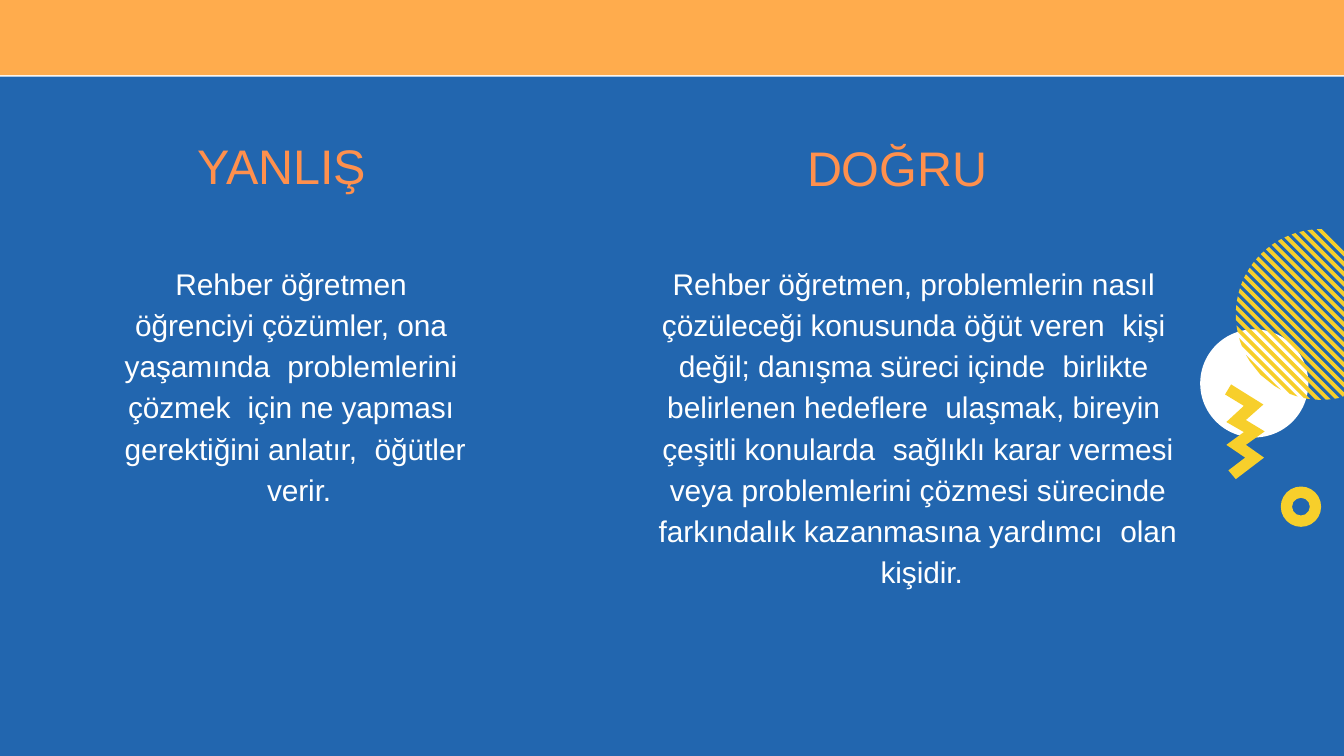
from math import sqrt

from lxml.etree import SubElement
from pptx import Presentation
from pptx.dml.color import RGBColor
from pptx.enum.shapes import MSO_SHAPE as Shape
from pptx.enum.text import MSO_ANCHOR as Anchor, MSO_AUTO_SIZE as AutoSize, PP_ALIGN as Align
from pptx.oxml.ns import qn
from pptx.util import Inches, Pt

COLORS = {
    "blue": "2266AF",
    "orange": "FFAC4D",
    "heading": "FF904D",
    "yellow": "F7CF2B",
    "white": "FFFFFF",
}
HEADING = {"size": 52, "color": "heading", "align": Align.LEFT, "spacing": 1.0, "before": 1}
BODY = {"size": 32, "color": "white", "align": Align.CENTER, "spacing": 1.15, "before": 0.9}

WRONG_TEXT = (
    "Rehber öğretmen  öğrenciyi çözümler, ona  yaşamında\tproblemlerini  çözmek\t"
    "için ne yapması  gerektiğini anlatır,\töğütler  verir."
)
RIGHT_TEXT = (
    "Rehber öğretmen, problemlerin nasıl  çözüleceği konusunda öğüt veren\t"
    "kişi  değil; danışma süreci içinde\tbirlikte  belirlenen hedeflere\t"
    "ulaşmak, bireyin  çeşitli konularda\tsağlıklı karar vermesi  veya\t"
    "problemlerini çözmesi sürecinde  farkındalık kazanmasına yardımcı\t\t"
    "olan  kişidir."
)
ZIGZAG = [
    (18.82, 6.42), (18.54, 6.25), (18.8, 6.02), (18.32, 5.72), (18.23, 5.87),
    (18.51, 6.04), (18.25, 6.28), (18.51, 6.43), (18.25, 6.62), (18.53, 6.81),
    (18.28, 7), (18.39, 7.13), (18.81, 6.81), (18.54, 6.62),
]


def hatch_stripes(center_x, center_y, radius, right, count, step, thickness):
    def chord(offset):
        half = sqrt(max(0, radius**2 - offset**2 / 2) / 2)
        start = center_x + offset / 2 - half
        end = min(center_x + offset / 2 + half, right)
        shift = center_x - center_y + offset
        return (start, start - shift), (end, end - shift)

    first = -1.72
    stripes = []
    for index in range(count):
        edge = first + index * step
        chords = [chord(edge - thickness * part / 2) for part in range(3)]
        starts, ends = zip(*chords)
        stripes.append(list(starts) + list(reversed(ends)))
    return stripes


class SlideBuilder:
    font = "Arial"
    tracking = -10

    def __init__(self, slide):
        self.slide = slide

    def paint(self, shape, color):
        shape.shadow.inherit = False
        shape.fill.solid()
        shape.fill.fore_color.rgb = RGBColor.from_string(COLORS[color])
        shape.line.fill.background()

    def preset(self, kind, box, color, adjustment=None):
        shape = self.slide.shapes.add_shape(kind, *map(Inches, box))
        if adjustment is not None:
            shape.adjustments[0] = adjustment
        self.paint(shape, color)

    def outline(self, contours, color):
        contours = [[(Inches(x), Inches(y)) for x, y in contour] for contour in contours]
        builder = self.slide.shapes.build_freeform(*contours[0][0])
        for index, contour in enumerate(contours):
            if index:
                builder.move_to(*contour[0])
            builder.add_line_segments(contour[1:], close=True)
        self.paint(builder.convert_to_shape(), color)

    def title(self, box, text, style):
        shape = self.slide.shapes.title
        self.slide.shapes._spTree.append(shape._element)
        self.set_text(shape, box, text, style)

    def text(self, box, text, style, tabs=()):
        shape = self.slide.shapes.add_textbox(*map(Inches, box))
        self.set_text(shape, box, text, style, tabs)

    def set_text(self, shape, box, text, style, tabs=()):
        for name, value in zip(("left", "top", "width", "height"), box):
            setattr(shape, name, Inches(value))
        frame = shape.text_frame
        frame_format = {
            "margin_left": 0, "margin_top": Inches(0.01), "margin_right": 0,
            "margin_bottom": 0, "word_wrap": True, "vertical_anchor": Anchor.TOP,
            "auto_size": AutoSize.SHAPE_TO_FIT_TEXT,
        }
        for name, value in frame_format.items():
            setattr(frame, name, value)
        paragraph = frame.paragraphs[0]
        paragraph_format = {
            "alignment": style["align"],
            "line_spacing": style["spacing"],
            "space_before": Pt(style["before"]),
        }
        for name, value in paragraph_format.items():
            setattr(paragraph, name, value)
        run = paragraph.add_run()
        run.text = text
        for name, value in {"name": self.font, "size": Pt(style["size"])}.items():
            setattr(run.font, name, value)
        run.font.color.rgb = RGBColor.from_string(COLORS[style["color"]])
        run._r.get_or_add_rPr().set("spc", str(self.tracking))
        properties = paragraph._p.get_or_add_pPr()
        properties.set("marL", str(Inches(0.01)))
        if tabs:
            tab_list = SubElement(properties, qn("a:tabLst"))
            for position in tabs:
                SubElement(tab_list, qn("a:tab"), pos=str(Inches(position)), algn="l")


def main():
    presentation = Presentation()
    presentation.slide_width = Inches(20)
    presentation.slide_height = Inches(11.25)
    builder = SlideBuilder(presentation.slides.add_slide(presentation.slide_layouts[5]))

    builder.preset(Shape.RECTANGLE, (0, 1.14, 20, 10.11), "blue")
    builder.preset(Shape.RECTANGLE, (0, 0, 20, 1.12), "orange")
    builder.preset(Shape.OVAL, (17.86, 4.9, 1.61, 1.61), "white")
    builder.outline([ZIGZAG], "yellow")
    builder.preset(Shape.DONUT, (19.06, 7.24, 0.6, 0.6), "yellow", 0.28)
    builder.outline(hatch_stripes(19.66, 4.68, 1.27, 20, 21, 0.15, 0.08), "yellow")

    builder.title((2.93, 2.02, 2.6, 0.89), "YANLIŞ", HEADING)
    builder.text((1.84, 3.86, 5.09, 3.71), WRONG_TEXT, BODY, (1.78, 2.42, 3.72))
    builder.text((12, 2.05, 2.72, 0.9), "DOĞRU", HEADING)
    builder.text(
        (9.79, 3.86, 7.72, 4.93), RIGHT_TEXT, BODY, (1.19, 3.43, 4.14, 5.71, 6.85, 6.87)
    )
    presentation.save("out.pptx")


if __name__ == "__main__":
    main()
